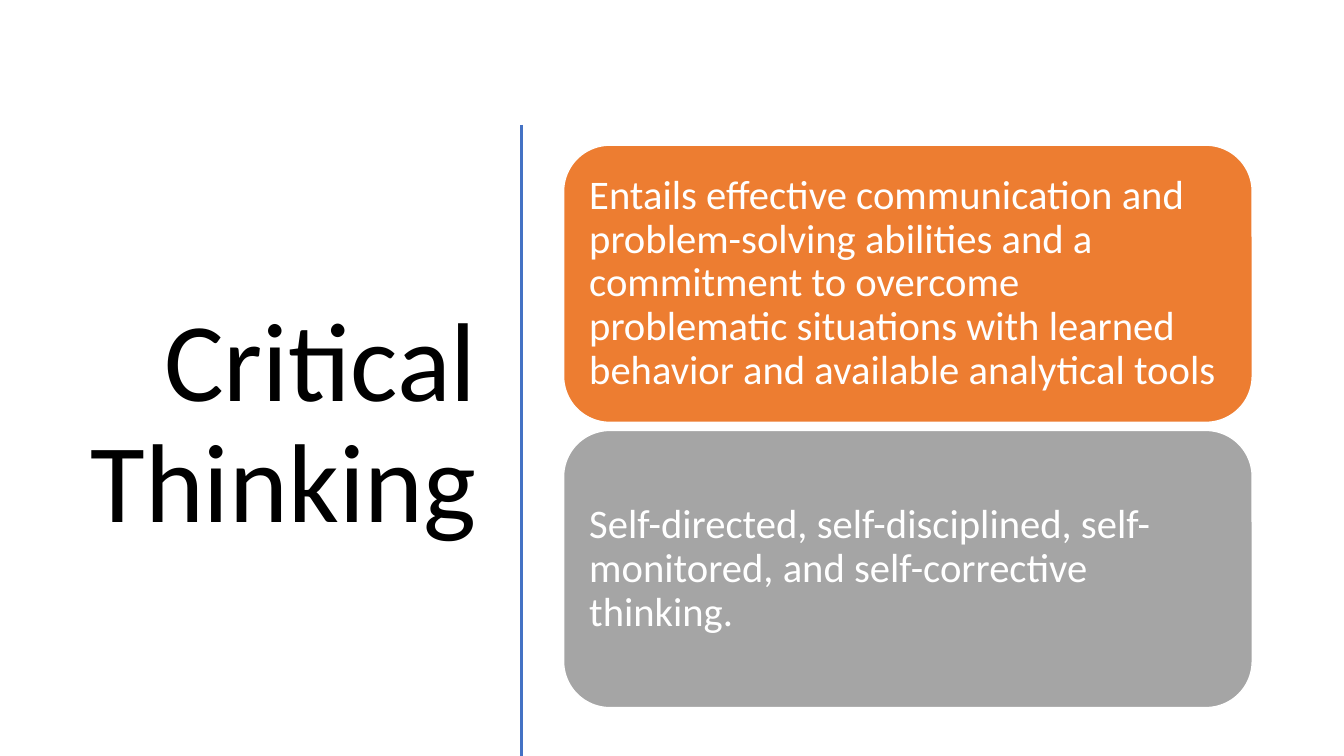
from dataclasses import dataclass

from lxml import etree
from pptx import Presentation
from pptx.dml.color import RGBColor
from pptx.enum.shapes import MSO_CONNECTOR, MSO_SHAPE
from pptx.enum.text import MSO_ANCHOR, MSO_AUTO_SIZE, PP_ALIGN
from pptx.oxml.ns import qn
from pptx.util import Inches, Pt

STRAIGHT = MSO_CONNECTOR.STRAIGHT
ROUNDED = MSO_SHAPE.ROUNDED_RECTANGLE
MIDDLE = MSO_ANCHOR.MIDDLE
NO_FIT = MSO_AUTO_SIZE.NONE
LEFT, RIGHT = PP_ALIGN.LEFT, PP_ALIGN.RIGHT
TITLE_ONLY = 5


@dataclass(frozen=True)
class Theme:
    font: str = "Calibri"
    title_size: int = 80
    card_size: int = 29
    black: str = "000000"
    white: str = "FFFFFF"
    blue: str = "4472C4"
    orange: str = "ED7D31"
    gray: str = "A5A5A5"


THEME = Theme()

# Layout in inches: title column, divider, card column
SLIDE_WIDTH, SLIDE_HEIGHT = 13.33, 7.5
TITLE_BOX = (0.52, 1.17, 4.31, 6.11)
DIVIDER_X, DIVIDER_TOP = 5.17, 1.24
CARD_LEFT, CARD_TOP, CARD_WIDTH, CARD_HEIGHT = 5.59, 1.44, 6.83, 2.75
CARD_STEP = CARD_HEIGHT + 0.08
CARD_INSET = 0.12

CARDS = [
    ("Entails effective communication and problem-solving abilities and a "
     "commitment to overcome problematic situations with learned behavior "
     "and available analytical tools", THEME.orange),
    ("Self-directed, self-disciplined, self-monitored, and self-corrective "
     "thinking.", THEME.gray),
]


def rgb(code):
    return RGBColor.from_string(code)


def set_text(shape, text, size, color, align):
    frame = shape.text_frame
    frame.text = text
    frame.word_wrap = True
    frame.auto_size = NO_FIT
    frame.vertical_anchor = MIDDLE
    para = frame.paragraphs[0]
    para.alignment = align
    para.line_spacing = 0.9
    font = para.runs[0].font
    font.name = THEME.font
    font.size = Pt(size)
    font.color.rgb = rgb(color)


def add_title(page, text):
    title = page.shapes.title
    title.left, title.top, title.width, title.height = map(Inches, TITLE_BOX)
    set_text(title, text, THEME.title_size, THEME.black, RIGHT)


def add_divider(page):
    line = page.shapes.add_connector(
        STRAIGHT, Inches(DIVIDER_X), Inches(DIVIDER_TOP),
        Inches(DIVIDER_X), Inches(SLIDE_HEIGHT))
    line.line.color.rgb = rgb(THEME.blue)
    line.line.width = Pt(2)
    # An empty effect list removes the shadow
    etree.SubElement(line.line._get_or_add_ln().getparent(), qn("a:effectLst"))


def add_card(page, row, text, color):
    card = page.shapes.add_shape(
        ROUNDED, Inches(CARD_LEFT), Inches(CARD_TOP + row * CARD_STEP),
        Inches(CARD_WIDTH), Inches(CARD_HEIGHT))
    card.shadow.inherit = False
    card.fill.solid()
    card.fill.fore_color.rgb = rgb(color)
    card.line.color.rgb = rgb(THEME.white)
    card.line.width = Pt(1)
    frame = card.text_frame
    frame.margin_left = frame.margin_right = Inches(CARD_INSET)
    frame.margin_top = frame.margin_bottom = Inches(CARD_INSET)
    set_text(card, text, THEME.card_size, THEME.white, LEFT)


def main():
    deck = Presentation()
    deck.slide_width = Inches(SLIDE_WIDTH)
    deck.slide_height = Inches(SLIDE_HEIGHT)
    page = deck.slides.add_slide(deck.slide_layouts[TITLE_ONLY])

    add_title(page, "Critical Thinking")
    add_divider(page)
    for row, (text, color) in enumerate(CARDS):
        add_card(page, row, text, color)

    deck.save("out.pptx")


if __name__ == "__main__":
    main()
